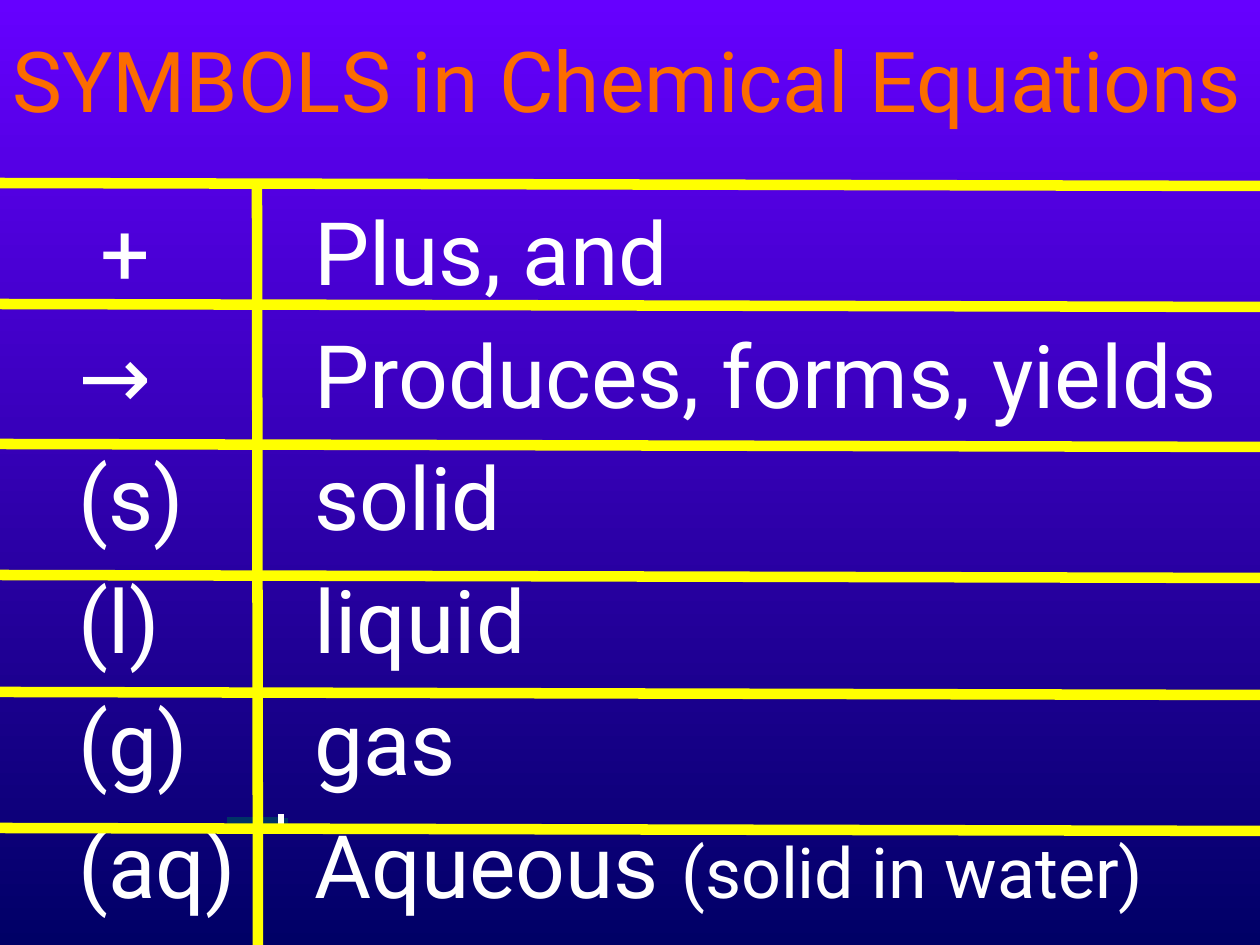
from typing import NamedTuple

from lxml import etree
from pptx import Presentation
from pptx import util as u
from pptx.dml.color import RGBColor
from pptx.enum import shapes, text
from pptx.oxml.ns import qn

EMU_PER_PX = 914400 / 126
COLORS = {
    "top": "6600FF",
    "bottom": "000066",
    "title": "FC6C00",
    "body": "FFFFFF",
    "rule": "FFFF00",
    "mark": "003366",
}
FONT = "Roboto"
TITLE_SIZE, BODY_SIZE, NOTE_SIZE = 48, 50, 40


class Box(NamedTuple):
    left: int
    top: int
    width: int
    height: int


class Line(NamedTuple):
    x1: int
    y1: int
    x2: int
    y2: int
    color: str = "rule"
    weight: float = 6


class Run(NamedTuple):
    text: str
    size: int = BODY_SIZE
    color: str = "body"


class Entry(NamedTuple):
    symbol: str
    meaning: str
    note: str = ""


def px(value: int) -> u.Emu:
    return u.Emu(round(value * EMU_PER_PX))


def rgb(name: str) -> RGBColor:
    return RGBColor.from_string(COLORS[name])


def draw_line(parent, line: Line) -> None:
    connector = parent.add_connector(
        shapes.MSO_CONNECTOR.STRAIGHT,
        px(line.x1), px(line.y1), px(line.x2), px(line.y2))
    connector.line.color.rgb = rgb(line.color)
    connector.line.width = u.Pt(line.weight)
    etree.SubElement(connector._element.spPr, qn("a:effectLst"))


def add_frame(parent, box: Box, anchor=text.MSO_ANCHOR.TOP):
    frame = parent.add_textbox(*map(px, box)).text_frame
    settings = {"word_wrap": True, "auto_size": text.MSO_AUTO_SIZE.NONE,
                "vertical_anchor": anchor}
    for name, value in settings.items():
        setattr(frame, name, value)
    return frame


def add_runs(paragraph, runs: list[Run]) -> None:
    for item in runs:
        run = paragraph.add_run()
        run.text = item.text
        run.font.color.rgb = rgb(item.color)
        for name, value in {"name": FONT, "size": u.Pt(item.size)}.items():
            setattr(run.font, name, value)


def draw_column(parent, box: Box, rows: list[list[Run]]) -> None:
    frame = add_frame(parent, box)
    for index, runs in enumerate(rows):
        paragraph = frame.add_paragraph() if index else frame.paragraphs[0]
        add_runs(paragraph, runs)
        # Hanging indent, and a gap of 20% of the line before each row
        properties = paragraph._p.get_or_add_pPr()
        properties.set("marL", str(px(48)))
        properties.set("indent", str(-px(48)))
        gap = etree.SubElement(properties, qn("a:spcBef"))
        etree.SubElement(gap, qn("a:spcPct")).set("val", "20000")


ENTRIES = [
    Entry(" +", "Plus, and"),
    Entry("→", "Produces, forms, yields"),
    Entry("(s)", "solid"),
    Entry("(l)", "liquid"),
    Entry("(g)", "gas"),
    Entry("(aq)", "Aqueous ", "(solid in water)"),
]
SMALL_MARKS = [
    Line(227, 821, 278, 821, "mark", 4.5),
    Line(286, 818, 286, 824, "mark", 2.25),
    Line(278, 819, 284, 819, "body", 6),
]
SLIDE_WIDTH, SLIDE_HEIGHT = 1260, 945
RULE_TOPS = [183, 304, 444, 575, 692, 828]
RULE_DROP = 3


def main() -> None:
    deck = Presentation()
    deck.slide_width, deck.slide_height = px(SLIDE_WIDTH), px(SLIDE_HEIGHT)
    slide = deck.slides.add_slide(deck.slide_layouts[6])

    # Background, dark towards the bottom
    backdrop = slide.background.fill
    backdrop.gradient()
    backdrop.gradient_angle = 270
    for stop, name in zip(backdrop.gradient_stops, ("top", "bottom")):
        stop.color.rgb = rgb(name)

    # Small marks behind the text
    for mark in SMALL_MARKS:
        draw_line(slide.shapes, mark)

    # Title
    title = add_frame(slide.shapes, Box(0, 0, SLIDE_WIDTH, 158),
                      text.MSO_ANCHOR.MIDDLE)
    add_runs(title.paragraphs[0],
             [Run("SYMBOLS in Chemical Equations", TITLE_SIZE, "title")])

    # Symbols and their meanings
    symbols = [[Run(entry.symbol)] for entry in ENTRIES]
    meanings = [[Run(entry.meaning)]
                + ([Run(entry.note, NOTE_SIZE)] if entry.note else [])
                for entry in ENTRIES]
    draw_column(slide.shapes, Box(66, 192, 192, 753), symbols)
    draw_column(slide.shapes, Box(302, 192, 958, 753), meanings)

    # Yellow rules between rows and columns
    rules = slide.shapes.add_group_shape().shapes
    for top in RULE_TOPS:
        draw_line(rules, Line(0, top, SLIDE_WIDTH, top + RULE_DROP))
    draw_line(rules, Line(257, 182, 258, SLIDE_HEIGHT))

    deck.save("out.pptx")


if __name__ == "__main__":
    main()
